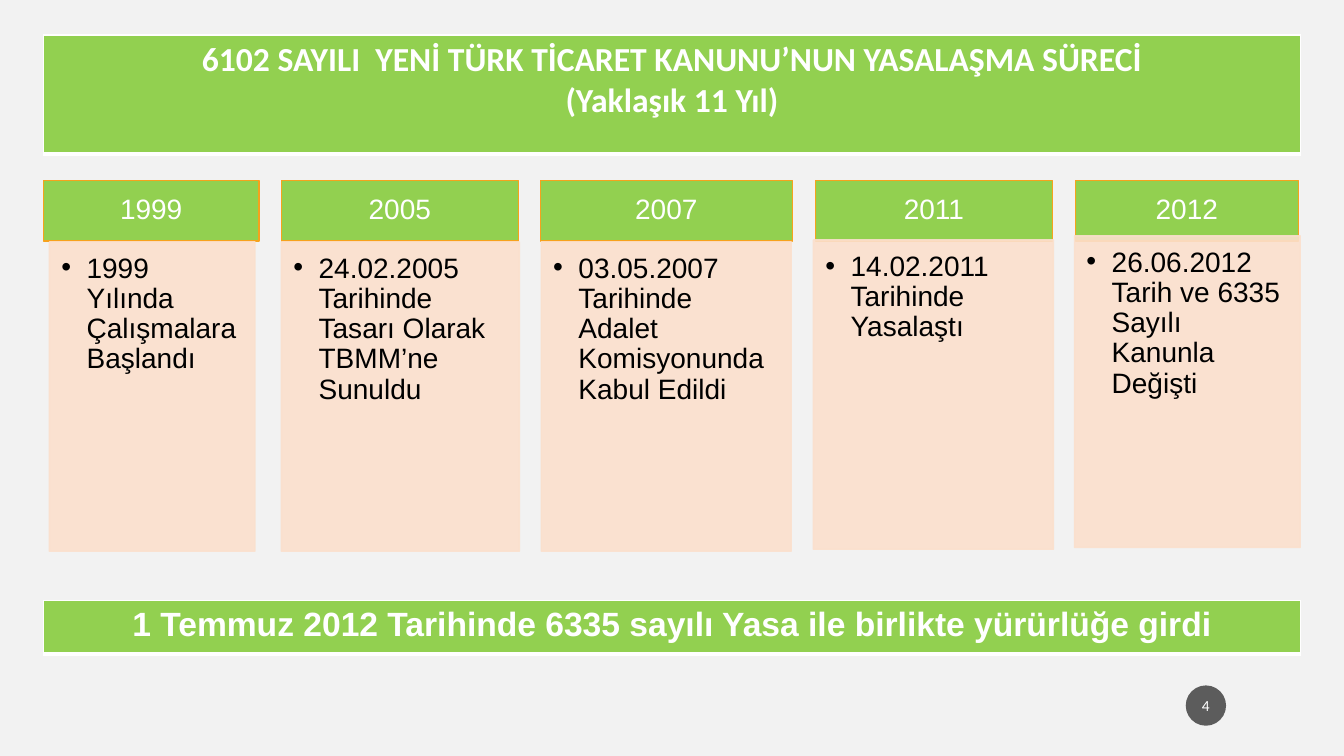
from dataclasses import dataclass

from lxml.etree import SubElement
from pptx import Presentation
from pptx.dml.color import RGBColor
from pptx.enum.shapes import MSO_SHAPE as Shape
from pptx.enum.text import MSO_ANCHOR as Anchor, PP_ALIGN as Align
from pptx.oxml.ns import qn
from pptx.util import Pt


@dataclass(frozen=True)
class Theme:
    background: str = "F2F2F2"
    green: str = "92D050"
    orange: str = "F6A21D"
    peach: str = "FBE0CD"
    dark: str = "1D1D1D"
    white: str = "FFFFFF"
    black: str = "000000"
    text_font: str = "Arial"
    title_font: str = "Calibri"
    banner_size: float = 24
    text_size: float = 20
    number_size: float = 11


class SlideBuilder:
    def __init__(self, slide, theme):
        self.slide = slide
        self.theme = theme
        slide.background.fill.solid()
        slide.background.fill.fore_color.rgb = RGBColor.from_string(theme.background)

    def paint(self, fill, color, opacity=100):
        fill.solid()
        fill.fore_color.rgb = RGBColor.from_string(color)
        if opacity < 100:
            color_element = fill._xPr.find(qn("a:solidFill"))[0]
            SubElement(color_element, qn("a:alpha"), val=str(opacity * 1000))

    def set_text(self, paragraph, text, size, color, font, bold=False, align=Align.CENTER):
        paragraph.text = text
        paragraph.alignment = align
        paragraph.font.size = Pt(size)
        paragraph.font.name = font
        paragraph.font.bold = bold
        paragraph.font.color.rgb = RGBColor.from_string(color)

    def block(self, kind, box, fill, margins, anchor, line=None, opacity=100):
        shape = self.slide.shapes.add_shape(kind, *map(Pt, box))
        shape.shadow.inherit = False
        self.paint(shape.fill, fill, opacity)
        if line:
            self.paint(shape.line.fill, line, opacity)
            shape.line.width = Pt(1)
        else:
            shape.line.fill.background()
        frame = shape.text_frame
        frame.word_wrap = True
        frame.vertical_anchor = anchor
        (frame.margin_left, frame.margin_top,
         frame.margin_right, frame.margin_bottom) = map(Pt, margins)
        return frame.paragraphs[0]

    def year(self, box, text):
        theme = self.theme
        paragraph = self.block(Shape.RECTANGLE, box, theme.green, (11.5, 6.5, 11.5, 6.5),
                               Anchor.MIDDLE, theme.orange)
        self.set_text(paragraph, text, theme.text_size, theme.white, theme.text_font)
        paragraph.line_spacing = 0.9

    def event(self, box, text):
        theme = self.theme
        paragraph = self.block(Shape.RECTANGLE, box, theme.peach, (8.6, 8.6, 11.5, 12.2),
                               Anchor.TOP, theme.peach, 90)
        self.set_text(paragraph, text, theme.text_size, theme.black, theme.text_font,
                      align=Align.LEFT)
        paragraph.line_spacing = 0.9
        paragraph.level = 1
        properties = paragraph._p.get_or_add_pPr()
        properties.set("marL", str(Pt(18)))
        properties.set("indent", str(Pt(-18)))
        SubElement(properties, qn("a:buFont"), typeface=theme.text_font)
        SubElement(properties, qn("a:buChar"), char="•")
        # The schema wants the default run properties after the bullet
        properties.append(properties.find(qn("a:defRPr")))

    def banner(self, box, lines, font):
        theme = self.theme
        table = self.slide.shapes.add_table(1, 1, *map(Pt, box)).table
        cell = table.cell(0, 0)
        frame = cell.text_frame
        for index, text in enumerate(lines):
            paragraph = frame.paragraphs[0] if index == 0 else frame.add_paragraph()
            self.set_text(paragraph, text, theme.banner_size, theme.white, font, bold=True)
        # White borders, with a thicker one below
        properties = cell._tc.get_or_add_tcPr()
        for side, width in (("L", 1), ("R", 1), ("T", 1), ("B", 3)):
            border = SubElement(properties, qn(f"a:ln{side}"), w=str(Pt(width)))
            fill = SubElement(border, qn("a:solidFill"))
            SubElement(fill, qn("a:srgbClr"), val=theme.white)
        self.paint(cell.fill, theme.green)

    def number(self, box, text):
        theme = self.theme
        paragraph = self.block(Shape.OVAL, box, theme.dark, (1.4, 3.6, 1.4, 3.6),
                               Anchor.MIDDLE, opacity=70)
        self.set_text(paragraph, text, theme.number_size, theme.white, theme.title_font)


# Year, event, header (left, width), body (left, top, width, height)
STAGES = [
    ("1999", "1999 Yılında Çalışmalara Başlandı",
     (31, 154), (35.3, 172.8, 146.9, 221)),
    ("2005", "24.02.2005 Tarihinde Tasarı Olarak TBMM’ne Sunuldu",
     (201, 169.2), (201, 172.8, 170, 221)),
    ("2007", "03.05.2007 Tarihinde Adalet Komisyonunda Kabul Edildi",
     (386, 180), (386.6, 172.8, 178.6, 221)),
    ("2011", "14.02.2011 Tarihinde Yasalaştı",
     (582.5, 169.2), (581, 171.4, 171.4, 221)),
    ("2012", "26.06.2012 Tarih ve 6335 Sayılı Kanunla Değişti",
     (768.2, 159.2), (767.5, 168.5, 161.3, 222.5)),
]
HEADER_TOP, HEADER_HEIGHT = 129, 43.2
BANNER_LEFT, BANNER_WIDTH = 31, 898


def main():
    theme = Theme()
    presentation = Presentation()
    presentation.slide_width, presentation.slide_height = Pt(960), Pt(540)
    slide = presentation.slides.add_slide(presentation.slide_layouts[6])
    builder = SlideBuilder(slide, theme)

    # Stages of the law
    for year, event, (left, width), body in STAGES:
        builder.year((left, HEADER_TOP, width, HEADER_HEIGHT), year)
        builder.event(body, event)

    # Closing and title banners
    builder.banner((BANNER_LEFT, 429, BANNER_WIDTH, 38),
                   ["1 Temmuz 2012 Tarihinde 6335 sayılı Yasa ile birlikte yürürlüğe girdi"],
                   theme.text_font)
    builder.banner((BANNER_LEFT, 25, BANNER_WIDTH, 85),
                   ["6102 SAYILI  YENİ TÜRK TİCARET KANUNU’NUN YASALAŞMA SÜRECİ",
                    "(Yaklaşık 11 Yıl)"],
                   theme.title_font)

    # Slide number
    builder.number((847, 489.6, 28.8, 28.8), "4")

    presentation.save("out.pptx")


if __name__ == "__main__":
    main()
